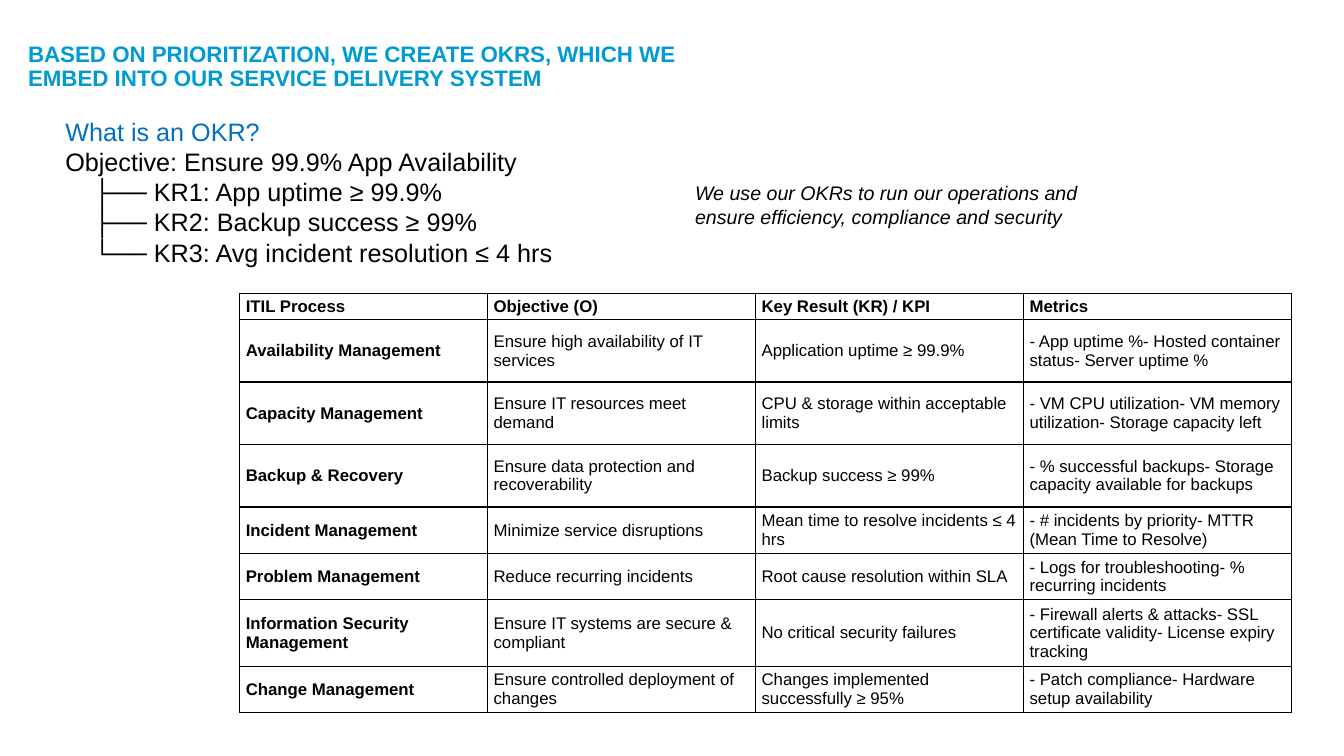
from dataclasses import dataclass

from lxml import etree
from pptx import Presentation
from pptx.dml.color import RGBColor
from pptx.enum.text import MSO_ANCHOR
from pptx.oxml.ns import qn
from pptx.slide import Slide
from pptx.table import _Cell
from pptx.text.text import TextFrame
from pptx.util import Inches, Length, Pt

MIDDLE = MSO_ANCHOR.MIDDLE
FONT = "Arial"
COLORS = {"title": "009BD2", "question": "0070C0", "text": "000000", "border": "000000"}

# Grid: columns and rows of a tenth of an inch
SLIDE_COLUMNS, SLIDE_ROWS = 133.4, 75
GRID_STEP = 0.1


@dataclass
class Line:
    text: str
    color: str = "text"
    indent: float = 0


@dataclass
class TextArea:
    column: float
    row: float
    columns: float
    rows: float
    lines: list[Line]
    size: float
    bold: bool = False
    italic: bool = False
    spacing: float = 1.0
    inset: float = 0.5


@dataclass
class Process:
    name: str
    objective: str
    key_result: str
    metrics: str
    rows: float


TREE_INDENT = 2.8
TEXT_AREAS = [
    TextArea(5.5, 11, 66.7, 16.2, [
        Line("What is an OKR?", "question"),
        Line("Objective: Ensure 99.9% App Availability"),
        Line("├── KR1: App uptime ≥ 99.9%", indent=TREE_INDENT),
        Line("├── KR2: Backup success ≥ 99%", indent=TREE_INDENT),
        Line("└── KR3: Avg incident resolution ≤ 4 hrs", indent=TREE_INDENT),
    ], size=18),
    TextArea(68, 17.5, 45.2, 5.7, [
        Line("We use our OKRs to run our operations and ensure efficiency, "
             "compliance and security"),
    ], size=14, italic=True),
    TextArea(1.8, 3.3, 124.3, 8.4, [
        Line("BASED ON PRIORITIZATION, WE CREATE OKRS, WHICH WE", "title"),
        Line("EMBED INTO OUR SERVICE DELIVERY SYSTEM", "title"),
    ], size=16, bold=True, spacing=0.9, inset=1),
]

TABLE_COLUMN, TABLE_ROW = 23.8, 29.1
TABLE_WIDTHS = [24.6, 26.6, 26.6, 26.6]
PROCESSES = [
    Process("ITIL Process", "Objective (O)", "Key Result (KR) / KPI", "Metrics", 2.3),
    Process("Availability Management", "Ensure high availability of IT services",
            "Application uptime ≥ 99.9%",
            "- App uptime %- Hosted container status- Server uptime %", 6.2),
    Process("Capacity Management", "Ensure IT resources meet demand",
            "CPU & storage within acceptable limits",
            "- VM CPU utilization- VM memory utilization- Storage capacity left", 6.2),
    Process("Backup & Recovery", "Ensure data protection and recoverability",
            "Backup success ≥ 99%",
            "- % successful backups- Storage capacity available for backups", 6.2),
    Process("Incident Management", "Minimize service disruptions",
            "Mean time to resolve incidents ≤ 4 hrs",
            "- # incidents by priority- MTTR (Mean Time to Resolve)", 4.3),
    Process("Problem Management", "Reduce recurring incidents",
            "Root cause resolution within SLA",
            "- Logs for troubleshooting- % recurring incidents", 4.3),
    Process("Information Security Management", "Ensure IT systems are secure & compliant",
            "No critical security failures",
            "- Firewall alerts & attacks- SSL certificate validity- License expiry tracking",
            6.2),
    Process("Change Management", "Ensure controlled deployment of changes",
            "Changes implemented successfully ≥ 95%",
            "- Patch compliance- Hardware setup availability", 4.3),
]


def grid(steps: float) -> Length:
    return Inches(steps * GRID_STEP)


def write_lines(frame: TextFrame, lines: list[Line], *, size: float, bold: bool = False,
                italic: bool = False, spacing: float = 1.0) -> None:
    for index, line in enumerate(lines):
        para = frame.add_paragraph() if index else frame.paragraphs[0]
        para.line_spacing = spacing
        if line.indent:
            properties = para._p.get_or_add_pPr()
            properties.set("marL", str(grid(line.indent)))
            properties.set("indent", "0")
        span = para.add_run()
        span.text = line.text
        span.font.name = FONT
        span.font.size = Pt(size)
        span.font.bold = bold
        span.font.italic = italic
        span.font.color.rgb = RGBColor.from_string(COLORS[line.color])


def add_text_area(page: Slide, area: TextArea) -> None:
    box = page.shapes.add_textbox(grid(area.column), grid(area.row),
                                  grid(area.columns), grid(area.rows))
    frame = box.text_frame
    frame.word_wrap = True
    frame.margin_left = frame.margin_right = grid(1)
    frame.margin_top = frame.margin_bottom = grid(area.inset)
    write_lines(frame, area.lines, size=area.size, bold=area.bold,
                italic=area.italic, spacing=area.spacing)


def add_borders(cell: _Cell) -> None:
    properties = cell._tc.get_or_add_tcPr()
    for side in ("a:lnL", "a:lnR", "a:lnT", "a:lnB"):
        border = etree.SubElement(properties, qn(side), w=str(Pt(1)))
        fill = etree.SubElement(border, qn("a:solidFill"))
        etree.SubElement(fill, qn("a:srgbClr"), val=COLORS["border"])


def add_process_table(page: Slide) -> None:
    table = page.shapes.add_table(
        len(PROCESSES), len(TABLE_WIDTHS), grid(TABLE_COLUMN), grid(TABLE_ROW),
        grid(sum(TABLE_WIDTHS)), grid(sum(process.rows for process in PROCESSES))).table
    table.first_row = table.horz_banding = False
    for column, width in zip(table.columns, TABLE_WIDTHS):
        column.width = grid(width)
    for row_index, process in enumerate(PROCESSES):
        table.rows[row_index].height = grid(process.rows)
        texts = (process.name, process.objective, process.key_result, process.metrics)
        for column_index, text in enumerate(texts):
            cell = table.cell(row_index, column_index)
            cell.vertical_anchor = MIDDLE
            cell.margin_left = cell.margin_right = grid(0.6)
            cell.margin_top = cell.margin_bottom = grid(0.3)
            add_borders(cell)
            cell.fill.background()
            write_lines(cell.text_frame, [Line(text)], size=12,
                        bold=row_index == 0 or column_index == 0)


def main() -> None:
    deck = Presentation()
    deck.slide_width, deck.slide_height = grid(SLIDE_COLUMNS), grid(SLIDE_ROWS)
    page = deck.slides.add_slide(deck.slide_layouts[6])

    # Title, OKR example and remark
    for area in TEXT_AREAS:
        add_text_area(page, area)

    # Processes with their objectives and metrics
    add_process_table(page)

    deck.save("out.pptx")


if __name__ == "__main__":
    main()
